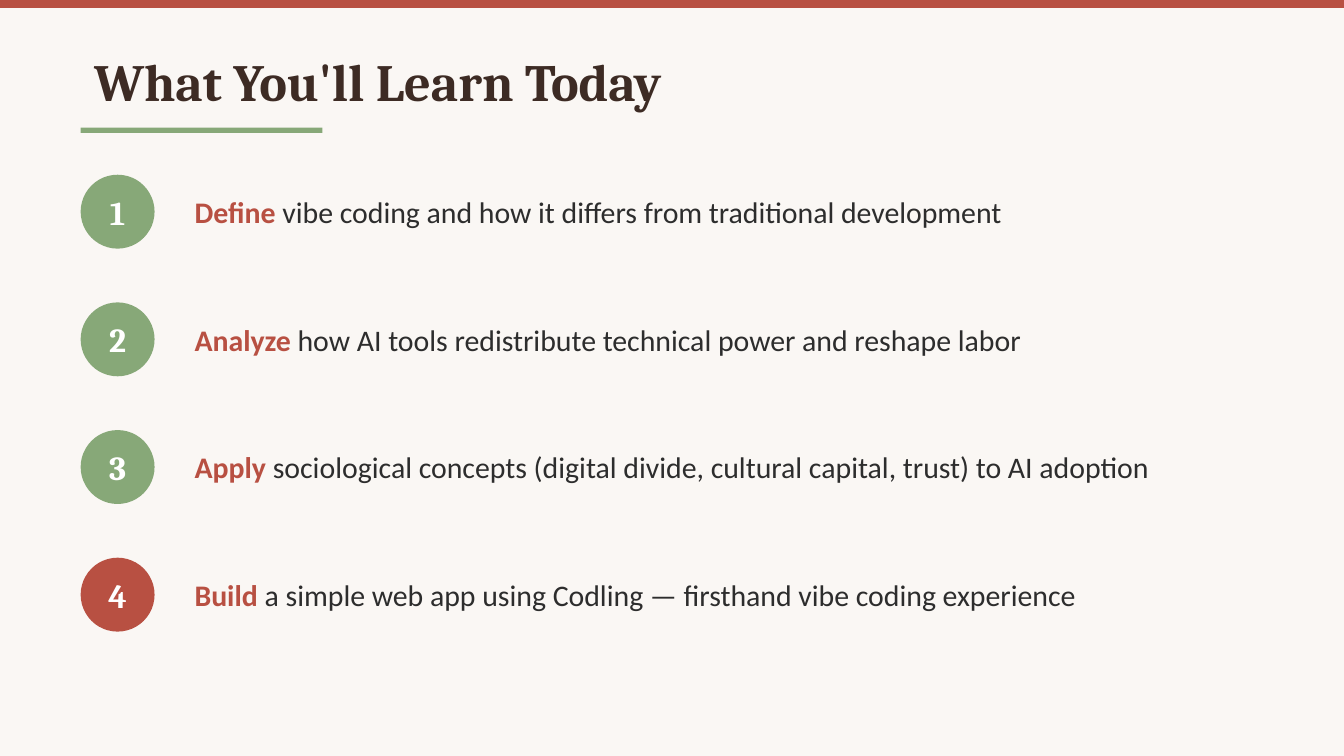
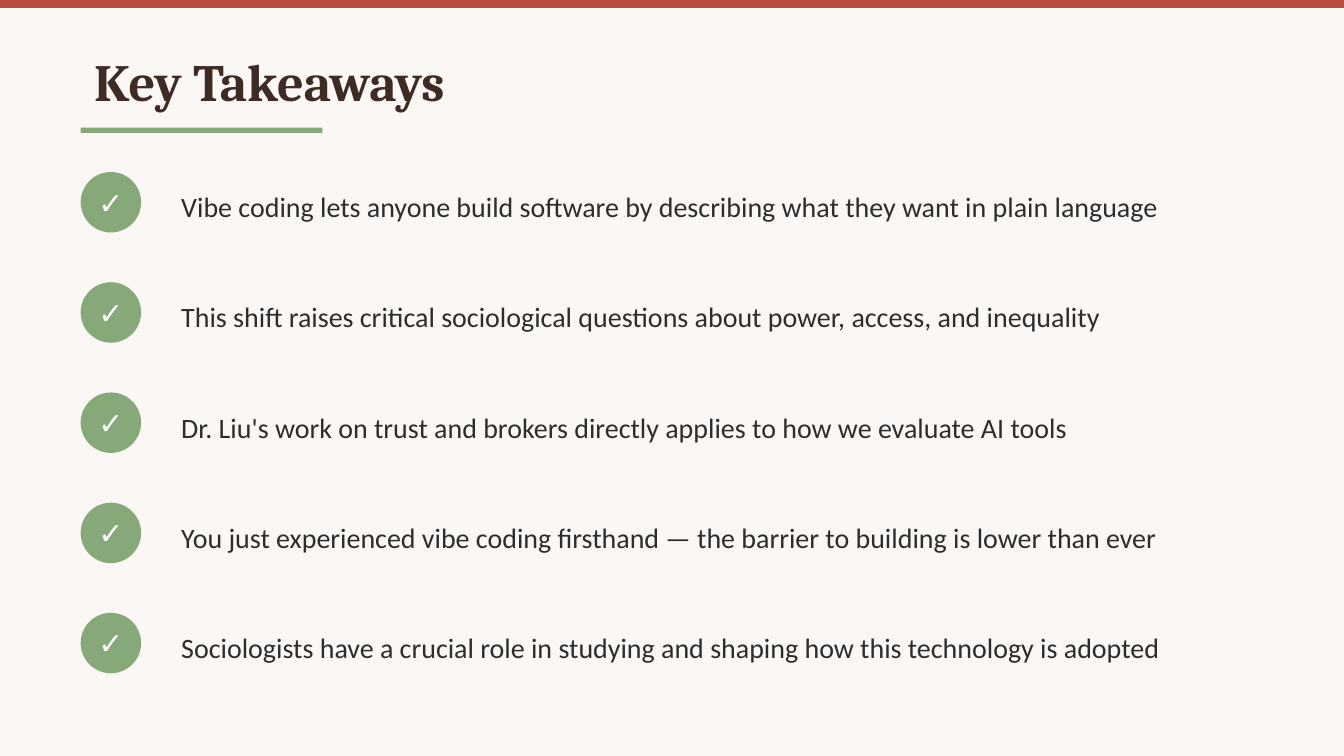
from pptx import Presentation
from pptx.dml.color import RGBColor
from pptx.enum.shapes import MSO_SHAPE as Shape
from pptx.enum.text import MSO_ANCHOR as Anchor, MSO_AUTO_SIZE as AutoSize, PP_ALIGN as Align
from pptx.util import Pt

PX = 4572
CREAM = RGBColor(0xFA, 0xF7, 0xF4)
RUST = RGBColor(0xB8, 0x50, 0x42)
SAGE = RGBColor(0x87, 0xA8, 0x78)
BROWN = RGBColor(0x3D, 0x2B, 0x24)
INK = RGBColor(0x2D, 0x2D, 0x2D)
WHITE = RGBColor(0xFF, 0xFF, 0xFF)
HEADING_FONT = "Cambria"
BODY_FONT = "Calibri"
SLIDE_SIZE = (2000, 1125)
LEFT = 120

GOALS = [
    ("Define ", "vibe coding and how it differs from traditional development"),
    ("Analyze ", "how AI tools redistribute technical power and reshape labor"),
    ("Apply ", "sociological concepts (digital divide, cultural capital, trust) to AI adoption"),
    ("Build ", "a simple web app using Codling — firsthand vibe coding experience"),
]
TAKEAWAYS = [
    "Vibe coding lets anyone build software by describing what they want in plain language",
    "This shift raises critical sociological questions about power, access, and inequality",
    "Dr. Liu's work on trust and brokers directly applies to how we evaluate AI tools",
    "You just experienced vibe coding firsthand — the barrier to building is lower than ever",
    "Sociologists have a crucial role in studying and shaping how this technology is adopted",
]


def scaled(box):
    return [length * PX for length in box]


def set_font(font, name, size, color, bold=False):
    font.name = name
    font.size = Pt(size)
    font.color.rgb = color
    font.bold = bold


def add_filled(slide, kind, box, color):
    shape = slide.shapes.add_shape(kind, *scaled(box))
    shape.shadow.inherit = False
    shape.fill.solid()
    shape.fill.fore_color.rgb = color
    shape.line.fill.background()
    return shape


def add_badge(slide, box, label, color, font_name, size, bold):
    badge = add_filled(slide, Shape.OVAL, box, color)
    frame = badge.text_frame
    frame.word_wrap = False
    frame.vertical_anchor = Anchor.MIDDLE
    frame.margin_left = frame.margin_right = frame.margin_top = frame.margin_bottom = 0
    paragraph = frame.paragraphs[0]
    paragraph.text = label
    paragraph.alignment = Align.CENTER
    set_font(paragraph.font, font_name, size, WHITE, bold)


def add_sentence(slide, box, text, size, lead="", line_spacing=None):
    frame = slide.shapes.add_textbox(*scaled(box)).text_frame
    frame.word_wrap = True
    frame.vertical_anchor = Anchor.MIDDLE
    paragraph = frame.paragraphs[0]
    paragraph.line_spacing = line_spacing
    set_font(paragraph.font, BODY_FONT, size, INK)
    if lead:
        run = paragraph.add_run()
        run.text = lead
        run.font.bold = True
        run.font.color.rgb = RUST
    paragraph.add_run().text = text


def add_titled_slide(presentation, title):
    slide = presentation.slides.add_slide(presentation.slide_layouts[5])
    add_filled(slide, Shape.RECTANGLE, (0, 0, SLIDE_SIZE[0], 12), RUST)
    heading = slide.shapes.title
    heading.left, heading.top, heading.width, heading.height = scaled((LEFT, 50, 1760, 140))
    frame = heading.text_frame
    frame.auto_size = AutoSize.NONE
    frame.vertical_anchor = Anchor.MIDDLE
    paragraph = frame.paragraphs[0]
    paragraph.text = title
    paragraph.alignment = Align.LEFT
    set_font(paragraph.font, HEADING_FONT, 28, BROWN, True)
    add_filled(slide, Shape.RECTANGLE, (LEFT, 190, 360, 8), SAGE)
    return slide


def add_goals(slide, left, top, pitch):
    size = 110
    for index, (verb, goal) in enumerate(GOALS):
        y = top + index * pitch
        color = RUST if index == len(GOALS) - 1 else SAGE
        add_badge(slide, (left, y, size, size), str(index + 1), color, HEADING_FONT, 18, True)
        add_sentence(slide, (left + 150, y, 1600, size), goal, 16, lead=verb)


def add_takeaways(slide, left, top, pitch):
    size = 90
    for index, takeaway in enumerate(TAKEAWAYS):
        y = top + index * pitch
        add_badge(slide, (left, y + 16, size, size), "✓", SAGE, BODY_FONT, 16, False)
        add_sentence(slide, (left + 130, y, 1630, 120), takeaway, 15, line_spacing=1.3)


def main():
    presentation = Presentation()
    presentation.slide_width, presentation.slide_height = scaled(SLIDE_SIZE)
    background = presentation.slide_master.background.fill
    background.solid()
    background.fore_color.rgb = CREAM
    add_goals(add_titled_slide(presentation, "What You'll Learn Today"), LEFT, 260, 190)
    add_takeaways(add_titled_slide(presentation, "Key Takeaways"), LEFT, 240, 164)
    presentation.save("out.pptx")


if __name__ == "__main__":
    main()
